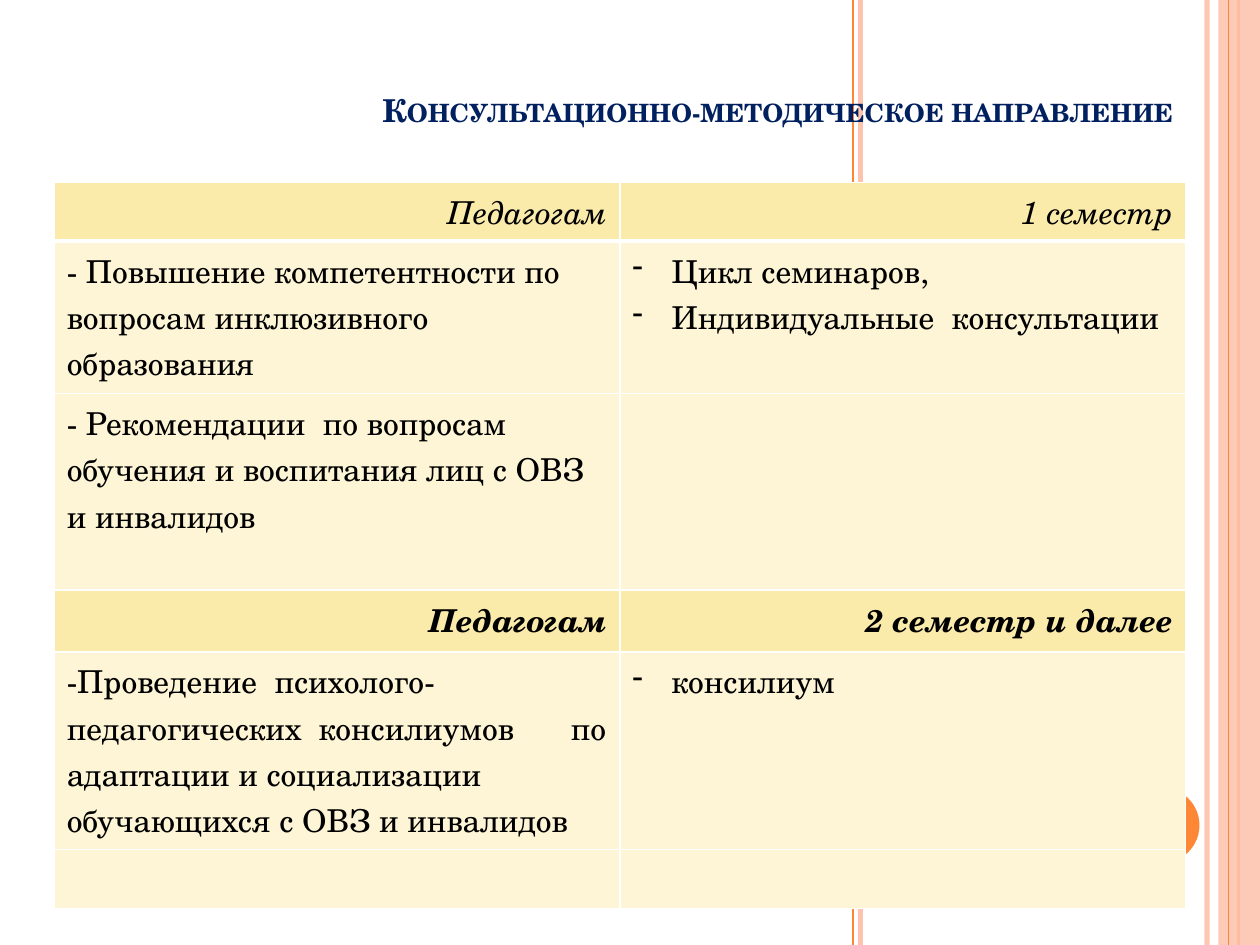
from lxml import etree
from pptx import Presentation
from pptx.dml.color import RGBColor
from pptx.enum.shapes import MSO_CONNECTOR, MSO_SHAPE
from pptx.enum.text import MSO_ANCHOR, PP_ALIGN
from pptx.oxml.ns import qn
from pptx.util import Inches, Pt

STRAIGHT = MSO_CONNECTOR.STRAIGHT
RECTANGLE, OVAL = MSO_SHAPE.RECTANGLE, MSO_SHAPE.OVAL
RIGHT, LEFT = PP_ALIGN.RIGHT, PP_ALIGN.LEFT
BOTTOM = MSO_ANCHOR.BOTTOM

FONT = "TeX Gyre Schola"
COLORS = {
    "peach": "FEC3AE", "orange": "FE8637", "navy": "002060", "black": "000000",
    "white": "FFFFFF", "header": "FBEBAB", "body": "FDF5D5",
}
WIDTH, HEIGHT = 10, 7.5
TITLE = "Консультационно-методическое направление"

# x, colour, width in points, opacity in percent
BACK_LINES = [
    (9.58, "peach", 3, 93), (6.83, "peach", 3, 100),
    (6.77, "orange", 1, 100), (9.83, "orange", 1.5, 100),
]
FRONT_LINE = (9.75, "orange", 0.75, 100)

# row height, style, left cell lines, right cell lines
ROWS = [
    (0.46, "italic", ["Педагогам"], ["1 семестр"]),
    (1.21, "body", ["- Повышение компетентности по вопросам инклюзивного образования"],
     ["Цикл семинаров,", "Индивидуальные  консультации"]),
    (1.56, "body", ["- Рекомендации  по вопросам обучения и воспитания лиц с ОВЗ и инвалидов"], []),
    (0.49, "bold italic", ["Педагогам"], ["2 семестр и далее"]),
    (1.57, "body",
     ["-Проведение  психолого-педагогических\tконсилиумов\tпо адаптации "
      "и социализации обучающихся с ОВЗ и инвалидов"], ["консилиум"]),
    (0.46, "body", [], []),
]
TABLE_LEFT, TABLE_TOP, COLUMN_WIDTH = 0.43, 1.45, 4.49


def rgb(name):
    return RGBColor.from_string(COLORS[name])


def set_opacity(element, percent):
    if percent < 100:
        color = next(element.iter(qn("a:srgbClr")))
        etree.SubElement(color, qn("a:alpha"), val=str(percent * 1000))


def add_vertical_line(page, x, color, width, opacity):
    line = page.shapes.add_connector(STRAIGHT, Inches(x), 0, Inches(x), Inches(HEIGHT))
    line.line.color.rgb = rgb(color)
    line.line.width = Pt(width)
    properties = line._element.spPr
    set_opacity(properties, opacity)
    etree.SubElement(properties, qn("a:effectLst"))


def add_plain_shape(page, kind, place, color, opacity=100):
    shape = page.shapes.add_shape(kind, *map(Inches, place))
    shape.shadow.inherit = False
    shape.fill.solid()
    shape.fill.fore_color.rgb = rgb(color)
    shape.line.fill.background()
    set_opacity(shape._element.spPr, opacity)


def style_font(font, color, bold=False, italic=False):
    font.name, font.size = FONT, Pt(18)
    font.color.rgb = rgb(color)
    font.bold, font.italic = bold, italic


def add_dash(para):
    """Give the paragraph a hanging dash bullet."""
    properties = para._p.get_or_add_pPr()
    properties.set("marL", str(Inches(0.31)))
    properties.set("indent", str(-Inches(0.31)))
    bullet = etree.Element(qn("a:buChar"), char="-")
    default_run = properties.find(qn("a:defRPr"))
    if default_run is None:
        properties.append(bullet)
    else:
        default_run.addprevious(bullet)


def set_borders(cell, bottom_width):
    """Draw white cell borders, which come before the fill in the cell XML."""
    properties = cell._tc.get_or_add_tcPr()
    widths = [("lnL", 1), ("lnR", 1), ("lnT", 1), ("lnB", bottom_width)]
    for position, (side, width) in enumerate(widths):
        border = etree.Element(qn(f"a:{side}"), w=str(Pt(width)))
        fill = etree.SubElement(border, qn("a:solidFill"))
        etree.SubElement(fill, qn("a:srgbClr"), val=COLORS["white"])
        properties.insert(position, border)


def fill_cell(cell, lines, style, dashed, bottom_width):
    is_header = style != "body"
    cell.fill.solid()
    cell.fill.fore_color.rgb = rgb("header" if is_header else "body")
    set_borders(cell, bottom_width)
    cell.text_frame.text = "\n".join(lines)
    for para in cell.text_frame.paragraphs:
        para.alignment = RIGHT if is_header else LEFT
        style_font(para.font, "black", "bold" in style, "italic" in style)
        for span in para.runs:
            style_font(span.font, "black", "bold" in style, "italic" in style)
        if dashed and lines:
            add_dash(para)


def add_decoration(page):
    for line in BACK_LINES:
        add_vertical_line(page, *line)
    add_plain_shape(page, RECTANGLE, (9.67, 0, 0.33, HEIGHT), "peach", 87)
    add_vertical_line(page, *FRONT_LINE)
    add_plain_shape(page, OVAL, (8.92, 6.25, 0.6, 0.6), "orange")


def add_title(page):
    title = page.shapes.title
    title.left, title.top, title.width, title.height = map(Inches, (2.72, 0.58, 6.69, 0.49))
    frame = title.text_frame
    frame.text = TITLE
    frame.word_wrap = True
    frame.vertical_anchor = BOTTOM
    para = frame.paragraphs[0]
    para.alignment = RIGHT
    span = para.runs[0]
    style_font(span.font, "navy", bold=True)
    span.font._element.set("cap", "small")
    page.shapes._spTree.append(title._element)  # in front of the lines


def add_plan_table(page):
    total_height = sum(row[0] for row in ROWS)
    table = page.shapes.add_table(
        len(ROWS), 2, Inches(TABLE_LEFT), Inches(TABLE_TOP),
        Inches(2 * COLUMN_WIDTH), Inches(total_height)).table
    for column in table.columns:
        column.width = Inches(COLUMN_WIDTH)
    for index, (height, style, *texts) in enumerate(ROWS):
        table.rows[index].height = Inches(height)
        for side, lines in enumerate(texts):
            dashed = side == 1 and style == "body"
            fill_cell(table.cell(index, side), lines, style, dashed, 3 if index == 0 else 1)


def main():
    deck = Presentation()
    deck.slide_width, deck.slide_height = Inches(WIDTH), Inches(HEIGHT)
    page = deck.slides.add_slide(deck.slide_layouts[5])
    add_decoration(page)
    add_title(page)
    add_plan_table(page)
    deck.save("out.pptx")


if __name__ == "__main__":
    main()
